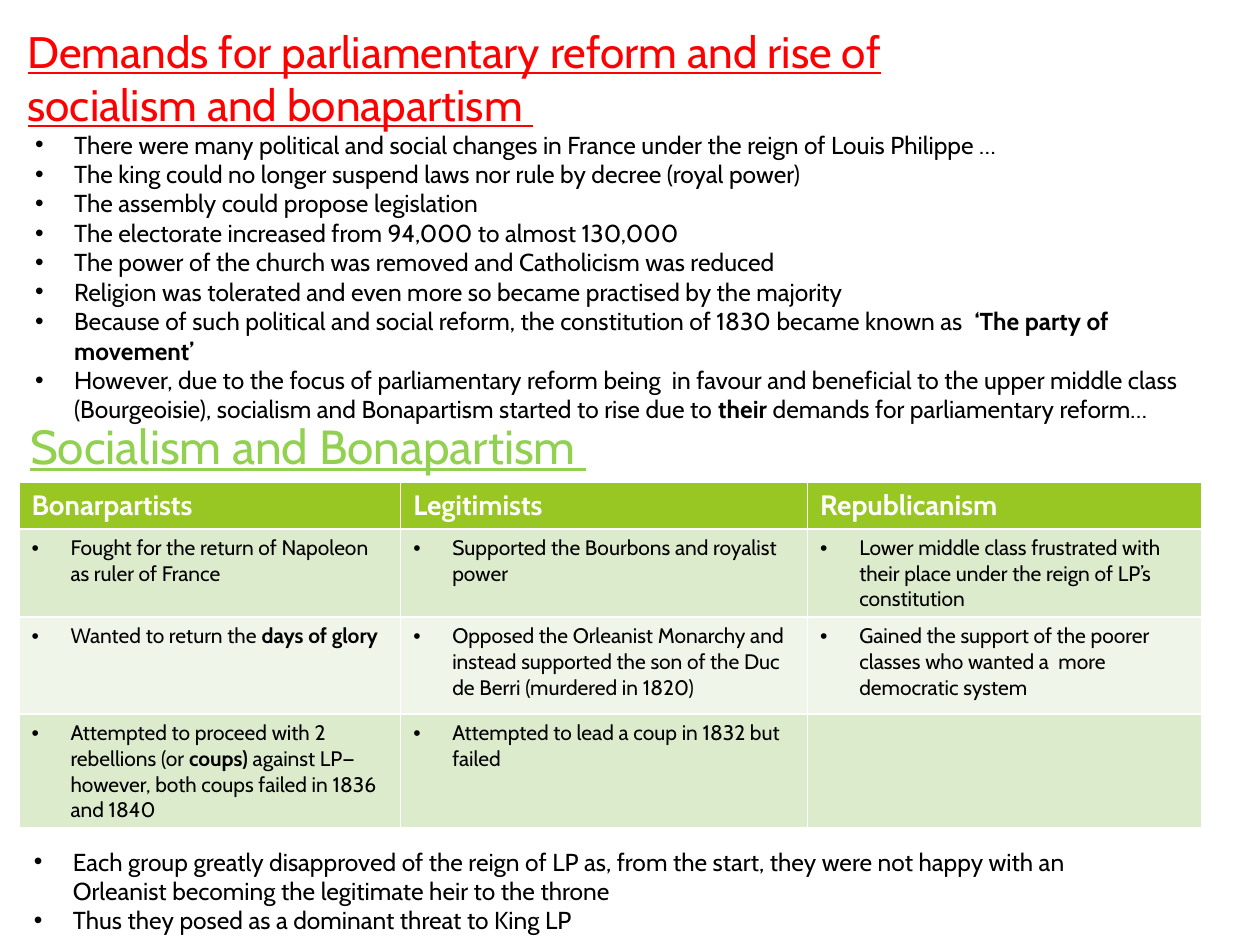
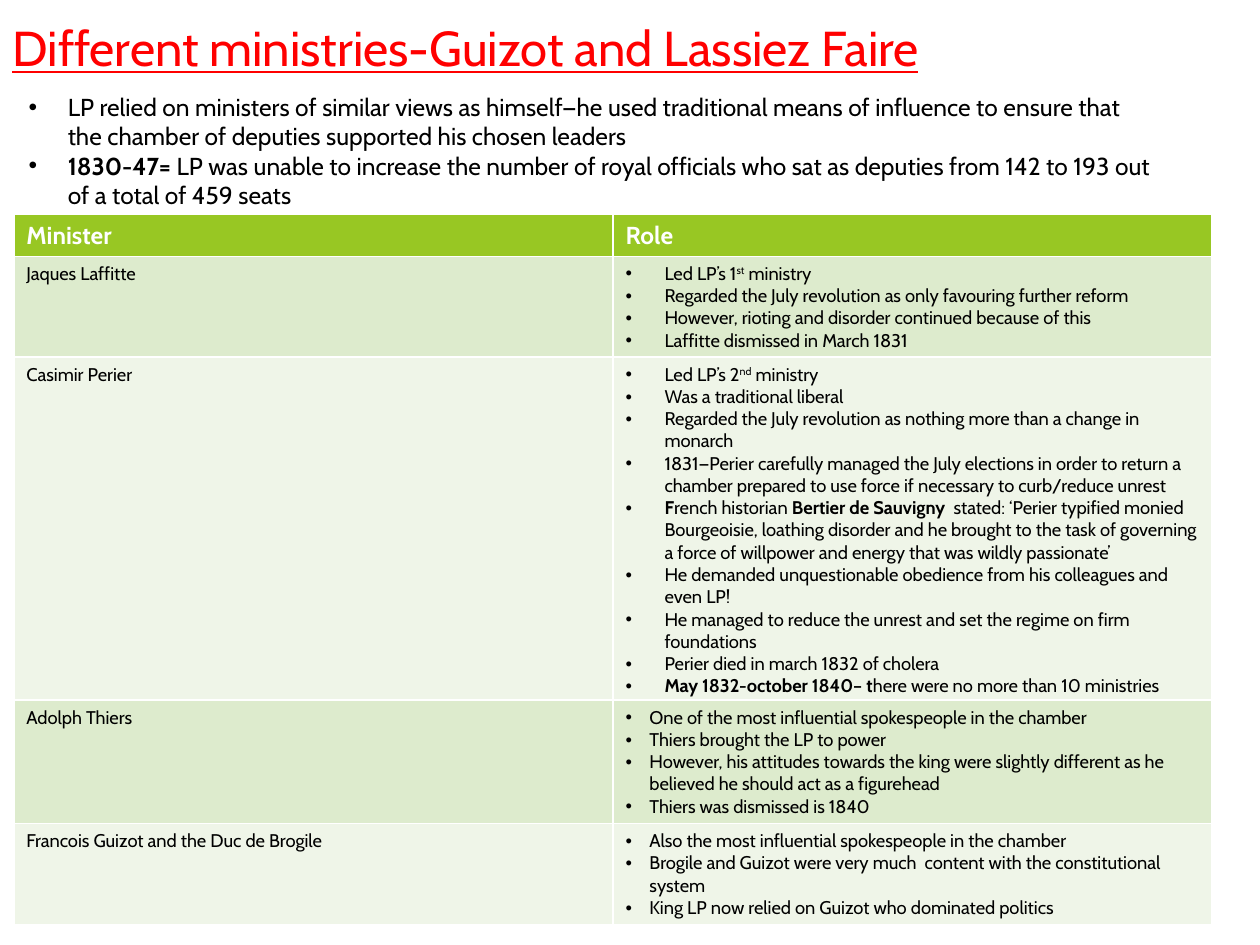
from pptx import Presentation, util as u
from pptx.dml.color import RGBColor
from pptx.enum import text
from pptx.oxml.ns import qn
from lxml import etree

FONT = "Cabin"
RED = RGBColor(0xFF, 0x00, 0x00)
LIME = RGBColor(0x92, 0xD0, 0x50)
BLACK = RGBColor(0x00, 0x00, 0x00)
WHITE = RGBColor(0xFF, 0xFF, 0xFF)
HEAD = RGBColor(0x98, 0xC7, 0x23)
BANDS = RGBColor(0xDD, 0xEB, 0xCD), RGBColor(0xEF, 0xF5, 0xE8)

# Grid: 100 columns by 75 rows
WIDE, HIGH = u.Inches(10), u.Inches(7.5)
COL, ROW = WIDE / 100, HIGH / 75
HANG, TIGHT = 3.1, 1.9  # bullet indents in columns

REFORMS = [
    "There were many political and social changes in France under the reign of Louis Philippe …",
    "The king could no longer suspend laws nor rule by decree (royal power)",
    "The assembly could propose legislation",
    "The electorate increased from 94,000 to almost 130,000",
    "The power of the church was removed and Catholicism was reduced",
    "Religion was tolerated and even more so became practised by the majority",
    "Because of such political and social reform, the constitution of 1830 became known as  "
    "*‘The party of movement’*",
    "However, due to the focus of parliamentary reform being  in favour and beneficial to the "
    "upper middle class (Bourgeoisie), socialism and Bonapartism started to rise due to "
    "*their *demands for parliamentary reform…",
]
GROUPS = [
    ["Fought for the return of Napoleon as ruler of France",
     "Supported the Bourbons and royalist power",
     "Lower middle class frustrated with their place under the reign of LP’s constitution"],
    ["Wanted to return the *days of glory*",
     "Opposed the Orleanist Monarchy and instead supported the son of the Duc de Berri "
     "(murdered in 1820)",
     "Gained the support of the poorer classes who wanted a  more democratic system"],
    ["Attempted to proceed with 2 rebellions (or *coups) *against LP—however, both coups "
     "failed in 1836 and 1840",
     "Attempted to lead a coup in 1832 but failed",
     ""],
]
THREAT = [
    "Each group greatly disapproved of the reign of LP as, from the start, they were not happy "
    "with an Orleanist becoming the legitimate heir to the throne",
    "Thus they posed as a dominant threat to King LP",
]
VIEWS = [
    "LP relied on ministers of similar views as himself—he used traditional means of influence "
    "to ensure that the chamber of deputies supported his chosen leaders",
    "*1830-47= *LP was unable to increase the number of royal officials who sat as deputies "
    "from 142 to 193 out of a total of 459 seats",
]
ROLES = [
    ("Jaques Laffitte", HANG, [
        "Led LP’s 1^st^ ministry",
        "Regarded the July revolution as only favouring further reform",
        "However, rioting and disorder continued because of this",
        "Laffitte dismissed in March 1831"]),
    ("Casimir Perier", HANG, [
        "Led LP’s 2^nd^ ministry",
        "Was a traditional liberal",
        "Regarded the July revolution as nothing more than a change in monarch",
        "1831—Perier carefully managed the July elections in order to return a chamber "
        "prepared to use force if necessary to curb/reduce unrest",
        "*F*rench historian *Bertier de Sauvigny  *stated: ‘Perier typified monied Bourgeoisie, "
        "loathing disorder and he brought to the task of governing a force of willpower and "
        "energy that was wildly passionate’",
        "He demanded unquestionable obedience from his colleagues and even LP!",
        "He managed to reduce the unrest and set the regime on firm foundations",
        "Perier died in march 1832 of cholera",
        "*May 1832-october 1840– t*here were no more than 10 ministries"]),
    ("Adolph Thiers", TIGHT, [
        "One of the most influential spokespeople in the chamber",
        "Thiers brought the LP to power",
        "However, his attitudes towards the king were slightly different as he believed he "
        "should act as a figurehead",
        "Thiers was dismissed is 1840"]),
    ("Francois Guizot and the Duc de Brogile", TIGHT, [
        "Also the most influential spokespeople in the chamber",
        "Brogile and Guizot were very much  content with the constitutional system",
        "King LP now relied on Guizot who dominated politics"]),
]


def place(left, top, width, height):
    return [int(n) for n in (left * COL, top * ROW, width * COL, height * ROW)]


def add_runs(para, line):
    """Write a line in which *…* is bold and ^…^ is raised."""
    for i, part in enumerate(line.split("*")):
        for j, bit in enumerate(part.split("^")):
            if not bit:
                continue
            run = para.add_run()
            run.text = bit
            if i % 2:
                run.font.bold = True
            if j % 2:
                run.font._element.set("baseline", "30000")


def add_bullet(para, hang):
    props = para._p.get_or_add_pPr()
    step = int(hang * COL)
    props.set("marL", str(step))
    props.set("indent", str(-step))
    etree.SubElement(props, qn("a:buFont"), typeface="Arial")
    etree.SubElement(props, qn("a:buChar"), char="•")


def write(frame, lines, size, color=BLACK, hang=0, bold=False, under=False):
    for i, line in enumerate(lines):
        para = frame.add_paragraph() if i else frame.paragraphs[0]
        if hang and line:
            add_bullet(para, hang)
        add_runs(para, line)
        font = para.font
        font.name, font.size, font.color.rgb = FONT, u.Pt(size), color
        font.bold, font.underline = bold, under


def add_box(slide, spot):
    frame = slide.shapes.add_textbox(*place(*spot)).text_frame
    frame.word_wrap = True
    return frame


def add_title(slide, left, top, line, size, color=RED):
    frame = add_box(slide, (left, top, 81.9, 9.7))
    frame.vertical_anchor = text.MSO_ANCHOR.MIDDLE
    write(frame, [line], size, color, under=True)


def add_list(slide, spot, lines):
    write(add_box(slide, spot), lines, 14, hang=HANG)


def add_grid(slide, left, top, cols, rows, heads, size):
    """Add a table with its header row and banded fills."""
    spot = place(left, top, sum(cols), sum(rows))
    table = slide.shapes.add_table(len(rows), len(cols), *spot).table
    for col, width in zip(table.columns, cols):
        col.width = int(width * COL)
    for i, (row, height) in enumerate(zip(table.rows, rows)):
        row.height = int(height * ROW)
        for cell in row.cells:
            cell.fill.solid()
            cell.fill.fore_color.rgb = BANDS[(i - 1) % 2] if i else HEAD
    for cell, head in zip(table.rows[0].cells, heads):
        write(cell.text_frame, [head], size, WHITE, bold=True)
    return table


def add_reform(slide):
    add_title(slide, 1.2, 1.3, "Demands for parliamentary reform and rise of socialism "
              "and bonapartism ", 25.2)
    add_list(slide, (1.8, 9.8, 92.9, 27.3), REFORMS)
    add_title(slide, 1.4, 30.5, "Socialism and Bonapartism ", 27.3, LIME)
    table = add_grid(slide, 1.5, 38.3, [30.3, 32.3, 31.3], [3.6, 7, 7.7, 9],
                     ["Bonarpartists", "Legitimists", "Republicanism"], 16)
    for i, group in enumerate(GROUPS, 1):
        for cell, line in zip(table.rows[i].cells, group):
            write(cell.text_frame, [line], 12, hang=HANG)
    add_list(slide, (1.7, 66.7, 89.2, 8.1), THREAT)


def add_ministry(slide):
    add_title(slide, 0, -1.1, "Different ministries-Guizot and Lassiez Faire", 28)
    add_list(slide, (1.3, 6.8, 91.3, 15.8), VIEWS)
    table = add_grid(slide, 1.1, 17, [47.55] * 2, [3.3, 8, 27.2, 9.8, 7.9],
                     ["Minister", "Role"], 14)
    for i, (name, hang, lines) in enumerate(ROLES, 1):
        write(table.cell(i, 0).text_frame, [name], 10.5)
        write(table.cell(i, 1).text_frame, lines, 10.5, hang=hang)


def main():
    deck = Presentation()
    deck.slide_width, deck.slide_height = WIDE, HIGH
    for build in (add_reform, add_ministry):
        build(deck.slides.add_slide(deck.slide_layouts[6]))
    deck.save("out.pptx")


if __name__ == "__main__":
    main()
